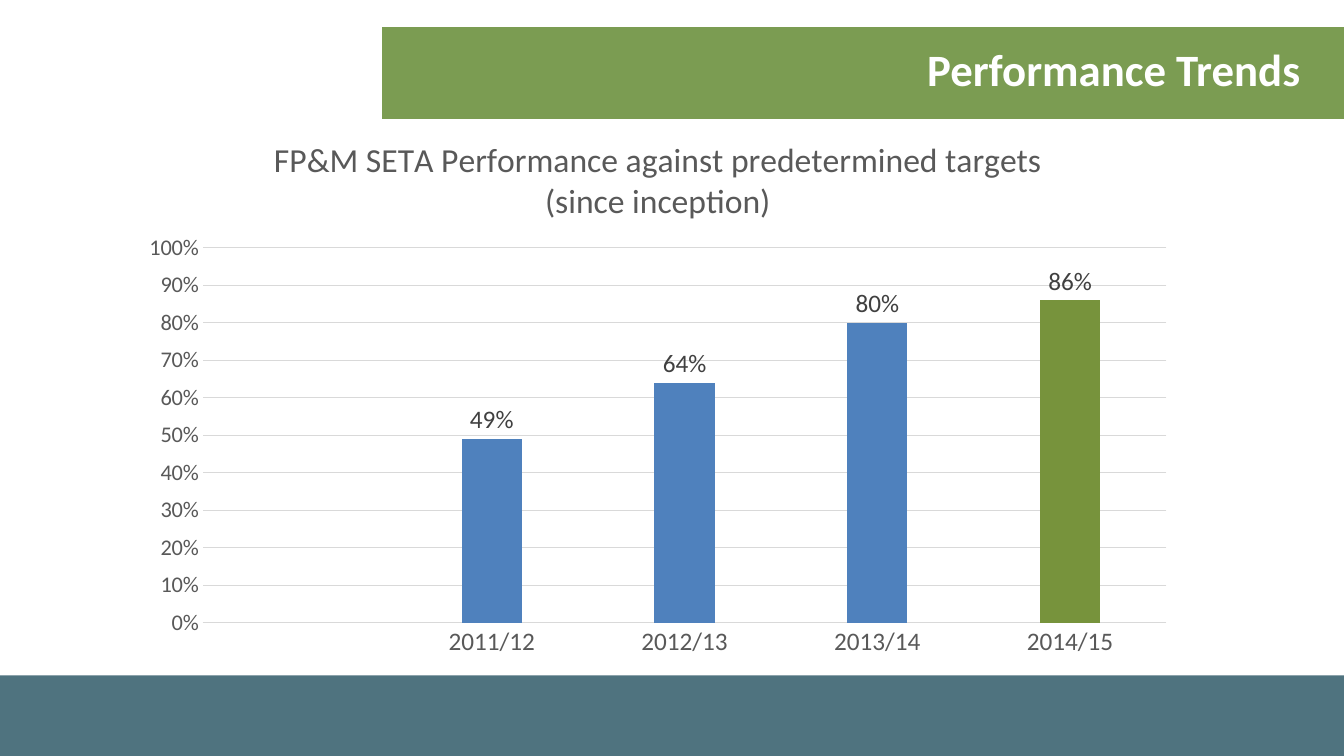
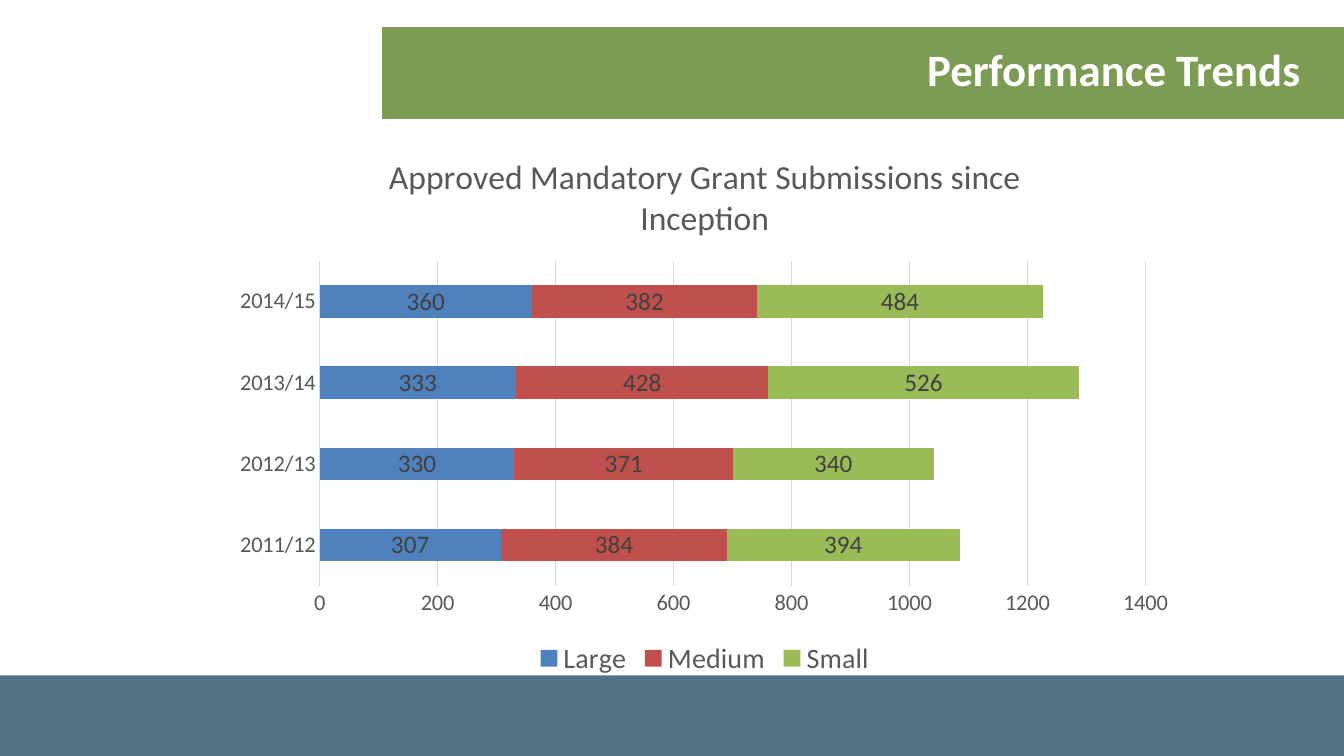
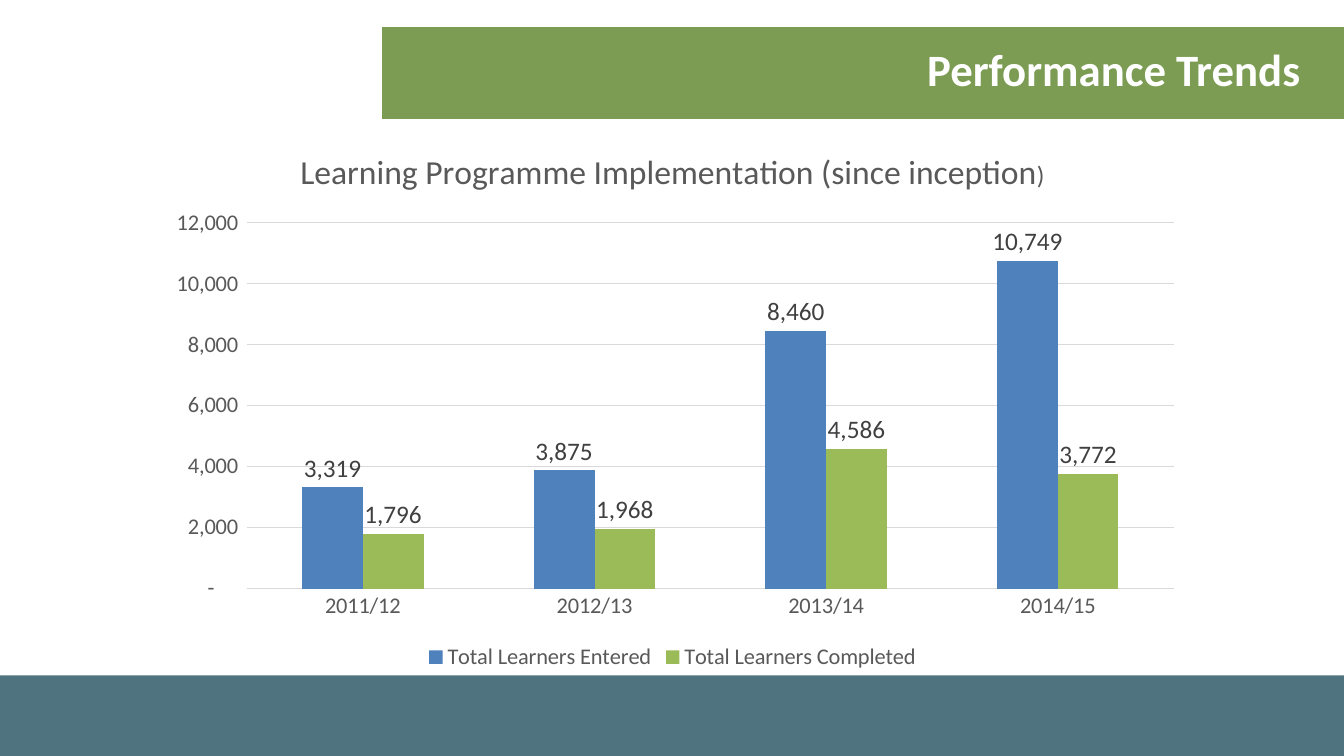
from lxml import etree
from pptx import Presentation
from pptx.chart.data import CategoryChartData
from pptx.dml.color import RGBColor
from pptx.enum.chart import XL_CHART_TYPE, XL_LABEL_POSITION, XL_LEGEND_POSITION, XL_TICK_MARK
from pptx.enum.shapes import MSO_SHAPE
from pptx.enum.text import MSO_ANCHOR, PP_ALIGN
from pptx.oxml.ns import qn
from pptx.util import Inches, Pt

FONT = "Calibri"
COLORS = {
    "footer": "4F737F", "band": "7B9C52", "white": "FFFFFF", "black": "000000",
    "text": "595959", "label": "404040", "grid": "D9D9D9",
    "blue": "4F81BD", "red": "C0504D", "green": "9BBB59", "olive": "77933C",
}
BANDS = [
    ("footer", (0, 6.7, 13.33, 0.8)),
    ("band", (3.79, 0.27, 9.54, 0.91)),
]
TITLE = "Performance Trends"
TITLE_BOX = (1, 0.06, 12, 1.25)
YEARS = ["2011/12", "2012/13", "2013/14", "2014/15"]
THOUSANDS = '_(* #,##0_);_(* \\(#,##0\\);_(* "-"??_);_(@_)'

CHARTS = [
    {
        "title": [("FP&M SETA Performance against predetermined targets (since inception)", 24)],
        "type": XL_CHART_TYPE.COLUMN_CLUSTERED,
        "box": (1.27, 1.14, 10.51, 5.49), "plot": (2.01, 2.46, 9.56, 3.72),
        "cats": [""] + YEARS,
        "series": [("Series 1", "blue", [None, 0.49, 0.64, 0.8, 0.86])],
        "points": {4: "olive"},
        "format": "0%", "max": 1, "step": 0.1,
        "gap": 219, "overlap": -27, "cat_size": 18, "legend_size": None,
    },
    {
        "title": [("Approved Mandatory Grant Submissions since Inception", 24)],
        "type": XL_CHART_TYPE.BAR_STACKED,
        "box": (2.2, 1.31, 9.58, 5.45), "plot": (3.17, 2.59, 8.19, 3.22),
        "cats": YEARS,
        "series": [
            ("Large", "blue", [307, 330, 333, 360]),
            ("Medium", "red", [384, 371, 428, 382]),
            ("Small", "green", [394, 340, 526, 484]),
        ],
        "points": {},
        "format": "General", "max": 1400, "step": 200,
        "gap": 150, "overlap": 100, "cat_size": 16, "legend_size": 20,
    },
    {
        "title": [("Learning Programme Implementation (since inception", 24), (")", 18)],
        "type": XL_CHART_TYPE.COLUMN_CLUSTERED,
        "box": (1.49, 1.31, 10.36, 5.39), "plot": (2.45, 2.21, 9.19, 3.63),
        "cats": YEARS,
        "series": [
            ("Total Learners Entered", "blue", [3319, 3875, 8460, 10749]),
            ("Total Learners Completed", "green", [1796, 1968, 4586, 3772]),
        ],
        "points": {},
        "format": THOUSANDS, "max": 12000, "step": 2000,
        "gap": 182, "overlap": 0, "cat_size": 16, "legend_size": 16,
    },
]


def rgb(name):
    return RGBColor.from_string(COLORS[name])


def inches(box):
    return [Inches(v) for v in box]


def set_font(font, size, color, bold=False):
    font.name = FONT
    font.size = Pt(size)
    font.bold = bold
    font.color.rgb = rgb(color)


def set_fill(fmt, color):
    fmt.fill.solid()
    fmt.fill.fore_color.rgb = rgb(color)


def set_line(line, color):
    line.color.rgb = rgb(color)
    line.width = Pt(0.75)


def prepare_layout(layout, s):
    for ph in list(layout.placeholders)[1:]:
        ph.element.getparent().remove(ph.element)
    title = layout.placeholders[0]
    title.left, title.top, title.width, title.height = inches(TITLE_BOX)
    bands = []
    for color, box in BANDS:
        sp = s.shapes.add_shape(MSO_SHAPE.RECTANGLE, *inches(box))
        sp.shadow.inherit = False
        set_fill(sp, color)
        sp.line.fill.background()
        bands.append(sp.element)
    for i, el in enumerate(bands):
        title.element.getparent().insert(2 + i, el)


def add_title(s):
    tf = s.shapes.title.text_frame
    tf.vertical_anchor = MSO_ANCHOR.MIDDLE
    p = tf.paragraphs[0]
    p.alignment = PP_ALIGN.RIGHT
    r = p.add_run()
    r.text = TITLE
    set_font(r.font, 32, "white", True)


def place_plot(chart, box, plot):
    area = chart.element.find(".//" + qn("c:plotArea"))
    for old in area.findall(qn("c:layout")):
        area.remove(old)
    layout = etree.Element(qn("c:layout"))
    manual = etree.SubElement(layout, qn("c:manualLayout"))
    fractions = [
        (plot[0] - box[0]) / box[2], (plot[1] - box[1]) / box[3],
        plot[2] / box[2], plot[3] / box[3],
    ]
    settings = [("layoutTarget", "inner"), ("xMode", "edge"), ("yMode", "edge")]
    settings += [(tag, f"{v:.4f}") for tag, v in zip("xywh", fractions)]
    for tag, value in settings:
        etree.SubElement(manual, qn("c:" + tag)).set("val", value)
    area.insert(0, layout)


def style_axes(chart, d):
    cat, val = chart.category_axis, chart.value_axis
    for axis, size in ((cat, d["cat_size"]), (val, 16)):
        axis.major_tick_mark = axis.minor_tick_mark = XL_TICK_MARK.NONE
        set_font(axis.tick_labels.font, size, "text")
    set_line(cat.format.line, "grid")
    val.format.line.fill.background()
    val.has_major_gridlines = True
    set_line(val.major_gridlines.format.line, "grid")
    val.minimum_scale, val.maximum_scale, val.major_unit = 0, d["max"], d["step"]
    val.tick_labels.number_format = d["format"]
    val.tick_labels.number_format_is_linked = False


def style_series(plot, d):
    plot.gap_width, plot.overlap = d["gap"], d["overlap"]
    plot.vary_by_categories = False
    stacked = d["type"] == XL_CHART_TYPE.BAR_STACKED
    for ser, (_, color, _) in zip(plot.series, d["series"]):
        ser.invert_if_negative = False
        set_fill(ser.format, color)
        for i, point_color in d["points"].items():
            set_fill(ser.points[i].format, point_color)
        labels = ser.data_labels
        labels.show_value = True
        labels.number_format = d["format"]
        labels.number_format_is_linked = False
        labels.position = XL_LABEL_POSITION.CENTER if stacked else XL_LABEL_POSITION.OUTSIDE_END
        set_font(labels.font, 18, "label")


def add_chart(s, d):
    data = CategoryChartData()
    data.categories = d["cats"]
    for name, _, values in d["series"]:
        data.add_series(name, values)
    chart = s.shapes.add_chart(d["type"], *inches(d["box"]), data).chart
    set_font(chart.font, 16, "black")
    chart.has_title = True
    p = chart.chart_title.text_frame.paragraphs[0]
    for text, size in d["title"]:
        r = p.add_run()
        r.text = text
        set_font(r.font, size, "text")
    chart.chart_title.include_in_layout = False
    chart.has_legend = d["legend_size"] is not None
    if chart.has_legend:
        chart.legend.position = XL_LEGEND_POSITION.BOTTOM
        chart.legend.include_in_layout = False
        set_font(chart.legend.font, d["legend_size"], "text")
    style_axes(chart, d)
    style_series(chart.plots[0], d)
    place_plot(chart, d["box"], d["plot"])


def main():
    prs = Presentation()
    prs.slide_width, prs.slide_height = Inches(13.33), Inches(7.5)
    layout = prs.slide_layouts[5]
    for i, d in enumerate(CHARTS):
        s = prs.slides.add_slide(layout)
        if i == 0:
            prepare_layout(layout, s)
        add_title(s)
        add_chart(s, d)
    prs.save("out.pptx")


if __name__ == "__main__":
    main()
